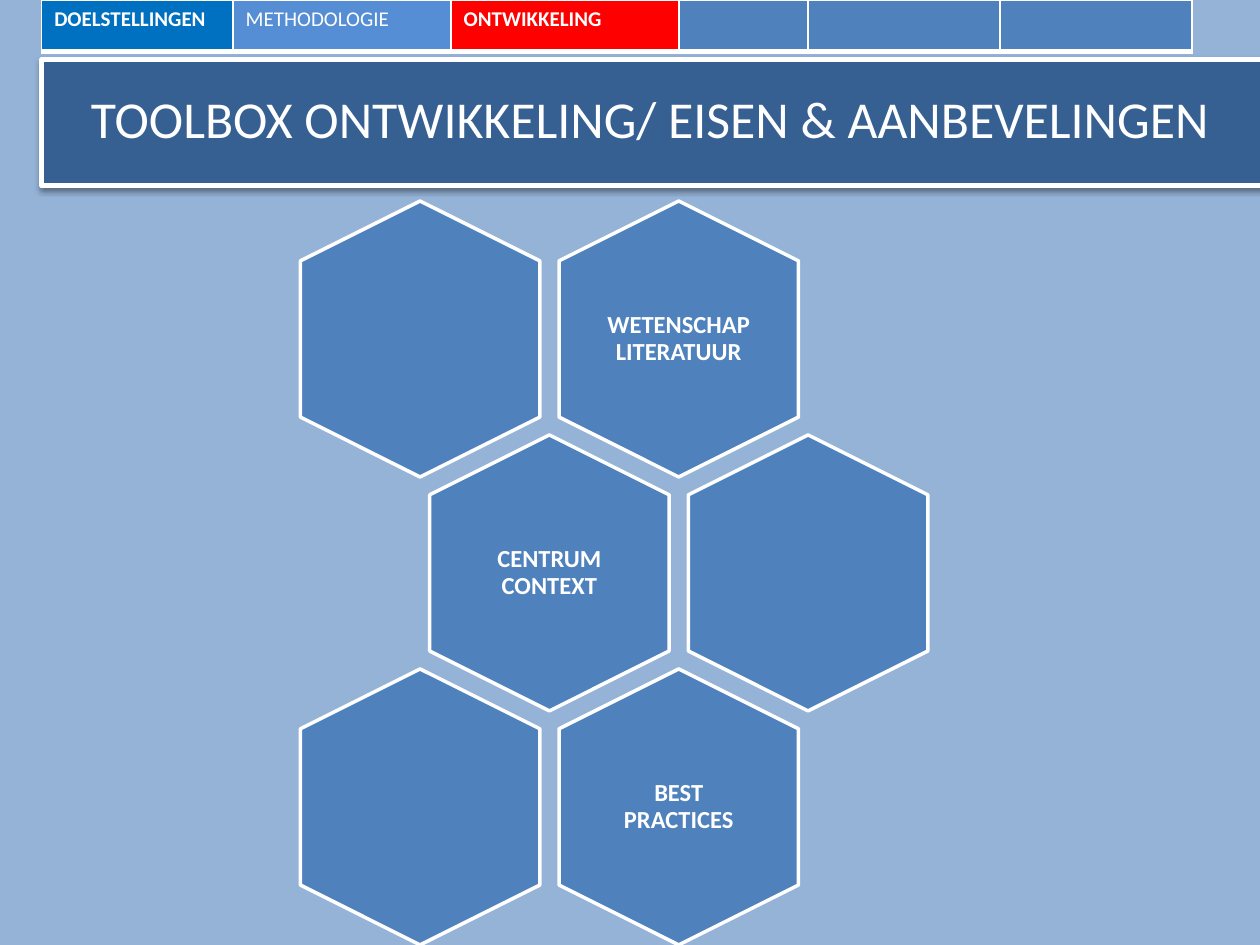
from pptx import Presentation
from pptx.dml.color import RGBColor
from pptx.enum.shapes import MSO_SHAPE
from pptx.enum.text import MSO_ANCHOR, PP_ALIGN
from pptx.oxml import parse_xml
from pptx.oxml.ns import nsdecls
from pptx.util import Pt


def rgb(code):
    return RGBColor.from_string(code)


class Deck:
    font = "Calibri"
    white = "FFFFFF"
    blue = "4F81BD"

    def __init__(self, slide, background):
        self.s = slide
        slide.background.fill.solid()
        slide.background.fill.fore_color.rgb = rgb(background)

    def style(self, p, size, bold):
        for r in p.runs:
            r.font.name = self.font
            r.font.size = Pt(size)
            r.font.bold = bold
            r.font.color.rgb = rgb(self.white)

    def upright(self, kind, x, y, w, h, fill, line):
        sp = self.s.shapes.add_shape(kind, Pt(x), Pt(y), Pt(w), Pt(h))
        sp.rotation = 90
        sp.shadow.inherit = False
        sp.fill.solid()
        sp.fill.fore_color.rgb = rgb(fill)
        sp.line.color.rgb = rgb(self.white)
        sp.line.width = Pt(line)
        return sp

    def shadow(self, sp):
        effects = sp._element.spPr.find("{*}effectLst")
        effects.append(parse_xml(
            f'<a:outerShdw {nsdecls("a")} blurRad="{Pt(3.1)}" dist="{Pt(1.6)}" '
            'dir="5400000" rotWithShape="0"><a:srgbClr val="000000">'
            '<a:alpha val="38000"/></a:srgbClr></a:outerShdw>'))

    def text(self, x, y, w, h, text, size, bold=False, inset=None,
             anchor=MSO_ANCHOR.TOP, spacing=1.0):
        tf = self.s.shapes.add_textbox(Pt(x), Pt(y), Pt(w), Pt(h)).text_frame
        tf.word_wrap = True
        tf.vertical_anchor = anchor
        if inset is not None:
            tf.margin_left = tf.margin_right = Pt(inset)
            tf.margin_top = tf.margin_bottom = Pt(inset)
        tf.text = text
        p = tf.paragraphs[0]
        p.alignment = PP_ALIGN.CENTER
        p.line_spacing = spacing
        self.style(p, size, bold)

    def tabs(self, x, y, h, tabs):
        total = sum(width for width, *_ in tabs)
        frame = self.s.shapes.add_table(1, len(tabs), Pt(x), Pt(y), Pt(total), Pt(h))
        table = frame.table
        table.first_row = table.horz_banding = False
        for i, (width, label, fill, bold) in enumerate(tabs):
            table.columns[i].width = Pt(width)
            cell = table.cell(0, i)
            cell.text = label
            self.style(cell.text_frame.paragraphs[0], 12, bold)
            self.borders(cell)
            cell.fill.solid()
            cell.fill.fore_color.rgb = rgb(fill)

    def borders(self, cell):
        tcPr = cell._tc.get_or_add_tcPr()
        for side, width in (("L", 1), ("R", 1), ("T", 1), ("B", 3)):
            tcPr.append(parse_xml(
                f'<a:ln{side} {nsdecls("a")} w="{Pt(width)}"><a:solidFill>'
                f'<a:srgbClr val="{self.white}"/></a:solidFill></a:ln{side}>'))

    def hexagon(self, x, y, label):
        self.upright(MSO_SHAPE.HEXAGON, x, y, 157.7, 136.8, self.blue, 2)
        if label:
            self.text(x + 31.7, y + 14, 94.3, 108.7, label, 14, True, 5,
                      MSO_ANCHOR.MIDDLE, 0.9)


def main():
    prs = Presentation()
    prs.slide_width, prs.slide_height = Pt(720), Pt(540)
    deck = Deck(prs.slides.add_slide(prs.slide_layouts[6]), "95B3D7")

    bar = deck.upright(MSO_SHAPE.RECTANGLE, 337, -279, 72, 698.4, "376092", 3)
    deck.shadow(bar)
    deck.tabs(23.8, 0, 29.5, [
        (109.4, "DOELSTELLINGEN", "0070C0", True),
        (124.6, "METHODOLOGIE", "558ED5", False),
        (130.3, "ONTWIKKELING", "FF0000", True),
        (73.8, "", deck.blue, False),
        (109.6, "", deck.blue, False),
        (109.6, "", deck.blue, False),
    ])
    deck.text(23.8, 46.3, 696.2, 48.2,
              "TOOLBOX ONTWIKKELING/ EISEN & AANBEVELINGEN", 29.6)

    step_x, step_y = 147.8, 133.7
    honeycomb = [("", "WETENSCHAP LITERATUUR"),
                 ("CENTRUM CONTEXT", ""),
                 ("", "BEST PRACTICES")]
    for row, labels in enumerate(honeycomb):
        for col, label in enumerate(labels):
            deck.hexagon(161.2 + (col + row % 2 / 2) * step_x,
                         125.3 + row * step_y, label)
    prs.save("out.pptx")


if __name__ == "__main__":
    main()
